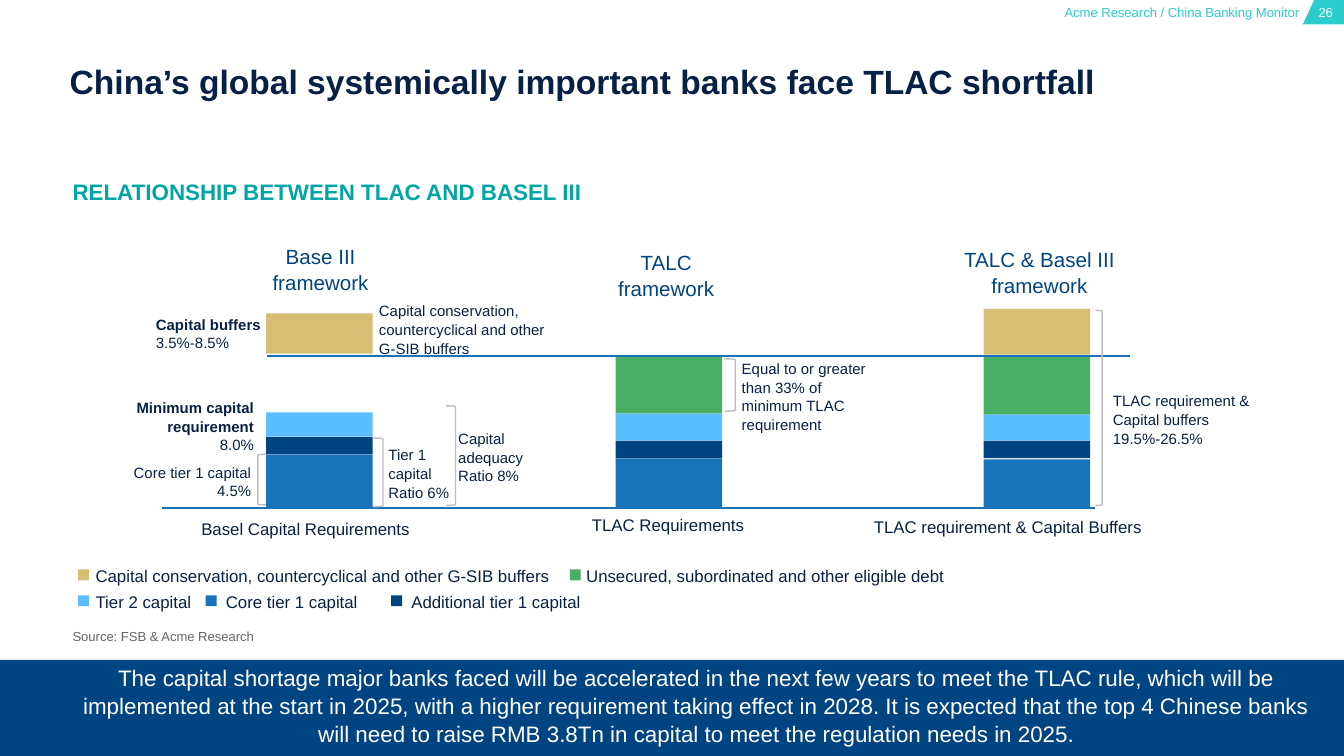
from dataclasses import dataclass

from lxml import etree
from pptx import Presentation
from pptx.dml.color import RGBColor
from pptx.enum import shapes, text
from pptx.oxml.ns import qn
from pptx.util import Pt

LEFT, CENTER, RIGHT = text.PP_ALIGN.LEFT, text.PP_ALIGN.CENTER, text.PP_ALIGN.RIGHT
TOP, MIDDLE, BOTTOM = (text.MSO_ANCHOR.TOP, text.MSO_ANCHOR.MIDDLE,
                       text.MSO_ANCHOR.BOTTOM)


@dataclass(frozen=True)
class Theme:
    font: str = "Arial"
    white: str = "FFFFFF"
    ink: str = "072146"
    navy: str = "004481"
    aqua: str = "2DCCCD"
    teal: str = "02A5A5"
    grey: str = "666666"
    bracket: str = "BDBDBD"
    buffer: str = "D8BE75"
    debt: str = "48AE64"
    tier2: str = "5BBEFF"
    core: str = "1973B8"
    tier1: str = "004481"
    title: int = 18
    heading: int = 12
    column: int = 11
    caption: int = 9
    note: int = 8
    small: int = 7
    spacing: float = 1.05


T = Theme()


def rgb(colour):
    return RGBColor.from_string(colour)


def within(box, dx, dy, w, h):
    """Turn offsets from a box's corner into a box on the slide."""
    return box[0] + dx, box[1] + dy, w, h


def label(s, box, words, size, colour=T.ink, align=LEFT, anchor=TOP, bold=0):
    """Add text; the first `bold` paragraphs are bold."""
    tf = s.shapes.add_textbox(*map(Pt, box)).text_frame
    tf.margin_left = tf.margin_right = tf.margin_top = tf.margin_bottom = 0
    tf.word_wrap = True
    tf.vertical_anchor = anchor
    tf.text = words
    for i, p in enumerate(tf.paragraphs):
        p.alignment = align
        p.line_spacing = T.spacing
        for r in p.runs:
            r.font.name = T.font
            r.font.size = Pt(size)
            r.font.bold = i < bold
            r.font.color.rgb = rgb(colour)


def paint(sp, colour):
    sp.shadow.inherit = False
    sp.fill.solid()
    sp.fill.fore_color.rgb = rgb(colour)
    sp.line.fill.background()


def block(s, box, colour):
    paint(s.shapes.add_shape(shapes.MSO_SHAPE.RECTANGLE, *map(Pt, box)), colour)


def bracket(s, box, rotation=180):
    sp = s.shapes.add_shape(shapes.MSO_SHAPE.LEFT_BRACKET, *map(Pt, box))
    sp.shadow.inherit = False
    sp.fill.background()
    sp.line.color.rgb = rgb(T.bracket)
    sp.line.width = Pt(0.75)
    sp.rotation = rotation


def rule(s, x, y, w):
    cx = s.shapes.add_connector(shapes.MSO_CONNECTOR.STRAIGHT,
                                Pt(x), Pt(y), Pt(x + w), Pt(y))
    cx.line.color.rgb = rgb(T.core)
    cx.line.width = Pt(1)
    etree.SubElement(cx._element.spPr, qn("a:effectLst"))


def page_header(s, box):
    x, y, w, h = box
    right, slant = x + w, 6
    fb = s.shapes.build_freeform(Pt(right - 16), Pt(y))
    fb.add_line_segments([(Pt(right), Pt(y)), (Pt(right), Pt(y + h)),
                          (Pt(right - 16 - slant), Pt(y + h))])
    paint(fb.convert_to_shape(), T.aqua)
    label(s, within(box, w - 18, 2.2, 16.5, 8.6), "26", T.small, T.white, CENTER)
    label(s, within(box, 0, 2.2, w - 24, 8.6),
          "Acme Research / China Banking Monitor", T.small, T.aqua, RIGHT)


def takeaway(s, box):
    block(s, box, T.navy)
    label(s, within(box, 39.6, 2.2, 667.4, 44),
          "The capital shortage major banks faced will be accelerated in the next few "
          "years to meet the TLAC rule, which will be implemented at the start in 2025, "
          "with a higher requirement taking effect in 2028. It is expected that the top 4 "
          "Chinese banks will need to raise RMB 3.8Tn in capital to meet the regulation "
          "needs in 2025.", T.heading, T.white, CENTER, MIDDLE)


def column(s, box, heading, heading_at, layers, caption, caption_at):
    """Stack layers upward from the box's foot; a layer without colour is a gap."""
    x, y, w, h = box
    top = h
    for colour, height in layers:
        top -= height
        if colour:
            block(s, within(box, 0, top, w, height), colour)
    for words, (shift, dy), size, colour, width in (
            (heading, heading_at, T.column, T.navy, 92),
            (caption, caption_at, T.caption, T.ink, 176)):
        label(s, within(box, w / 2 + shift - width / 2, dy, width, 13),
              words, size, colour, CENTER)


def diagram(s, box):
    x, y, w, h = box
    bar = 57
    columns = (
        (83.6, "Base III\nframework", (0.7, 0.3),
         ((T.core, 28.5), (T.tier1, 9.5), (T.tier2, 13), (None, 31.5), (T.buffer, 21.6)),
         "Basel Capital Requirements", (-7.5, 147.2)),
        (270.8, "TALC\nframework", (-1.4, 3.2),
         ((T.core, 26.5), (T.tier1, 9.5), (T.tier2, 14.5), (T.debt, 31)),
         "TLAC Requirements", (-0.5, 145.4)),
        (468, "TALC & Basel III\nframework", (1.4, 1.8),
         ((T.core, 25.8), (None, 0.7), (T.tier1, 9.5), (T.tier2, 14), (T.debt, 30.7),
          (None, 1.3), (T.buffer, 24.5)),
         "TLAC requirement & Capital Buffers", (-15.7, 146.5)),
    )
    for dx, *content in columns:
        column(s, within(box, dx, 0, bar, h), *content)

    rule(s, x + 84.3, y + 60.8, 462.2)
    rule(s, x + 28, y + h, 499.7)

    for part, rotation in (((79.2, 113.4, 4.3, 27.1), 0), ((141.2, 104.7, 5, 36.7), 180),
                           ((180, 87.4, 5, 53.3), 180), ((329.1, 62.2, 5.8, 28.1), 180),
                           ((527.8, 36.3, 3.6, 104.4), 180)):
        bracket(s, within(box, *part), rotation)

    notes = (
        ((24.5, 38.5, 75.6, 19.4), "Capital buffers\n3.5%-8.5%", LEFT, 1),
        ((144, 31.3, 90, 28.8),
         "Capital conservation,\ncountercyclical and other G-SIB buffers", LEFT, 0),
        ((1.5, 83.1, 75.6, 28.8), "Minimum capital requirement\n8.0%", RIGHT, 1),
        ((0, 117.7, 75.6, 19.4), "Core tier 1 capital 4.5%", RIGHT, 0),
        ((149.1, 108.3, 37.4, 28.8), "Tier 1\ncapital\nRatio 6%", LEFT, 0),
        ((186.5, 99.7, 41, 28.8), "Capital adequacy\nRatio 8%", LEFT, 0),
        ((338.4, 62.2, 74.9, 38.9),
         "Equal to or greater than 33% of minimum TLAC requirement", LEFT, 0),
        ((537.2, 79.5, 74.9, 28.8),
         "TLAC requirement & Capital buffers\n19.5%-26.5%", LEFT, 0),
    )
    for part, words, align, bold in notes:
        label(s, within(box, *part), words, T.note, align=align, bold=bold)


def legend(s, box):
    rows = (
        ((0, 9.4, 246, T.buffer,
          "Capital conservation, countercyclical and other G-SIB buffers"),
         (263.5, 8.7, 198, T.debt, "Unsecured, subordinated and other eligible debt")),
        ((0, 9.4, 59, T.tier2, "Tier 2 capital"),
         (68.4, 10.8, 88, T.core, "Core tier 1 capital"),
         (167.8, 10.8, 122, T.tier1, "Additional tier 1 capital")),
    )
    pitch = box[3] / len(rows)
    for i, row in enumerate(rows):
        for dx, indent, width, colour, words in row:
            block(s, within(box, dx, i * pitch + 2.7, 5.8, 5.8), colour)
            label(s, within(box, dx + indent, i * pitch, width, 10.8), words, T.caption)


def main():
    prs = Presentation()
    prs.slide_width, prs.slide_height = Pt(720), Pt(405)
    s = prs.slides.add_slide(prs.slide_layouts[6])

    page_header(s, (498, 0, 222, 13))
    label(s, (37.4, 31.7, 669.6, 26.6),
          "China’s global systemically important banks face TLAC shortfall",
          T.title, bold=1)
    label(s, (38.9, 95, 655.2, 14.4), "RELATIONSHIP BETWEEN TLAC AND BASEL III",
          T.heading, T.teal, bold=1)
    diagram(s, (59, 130, 612, 142))
    legend(s, (41.8, 302.4, 470, 27.6))
    label(s, (38.9, 333.4, 181.4, 11.5), "Source: FSB & Acme Research",
          T.small, T.grey, anchor=BOTTOM)
    takeaway(s, (0, 353.5, 720, 51.5))
    prs.save("out.pptx")


if __name__ == "__main__":
    main()
